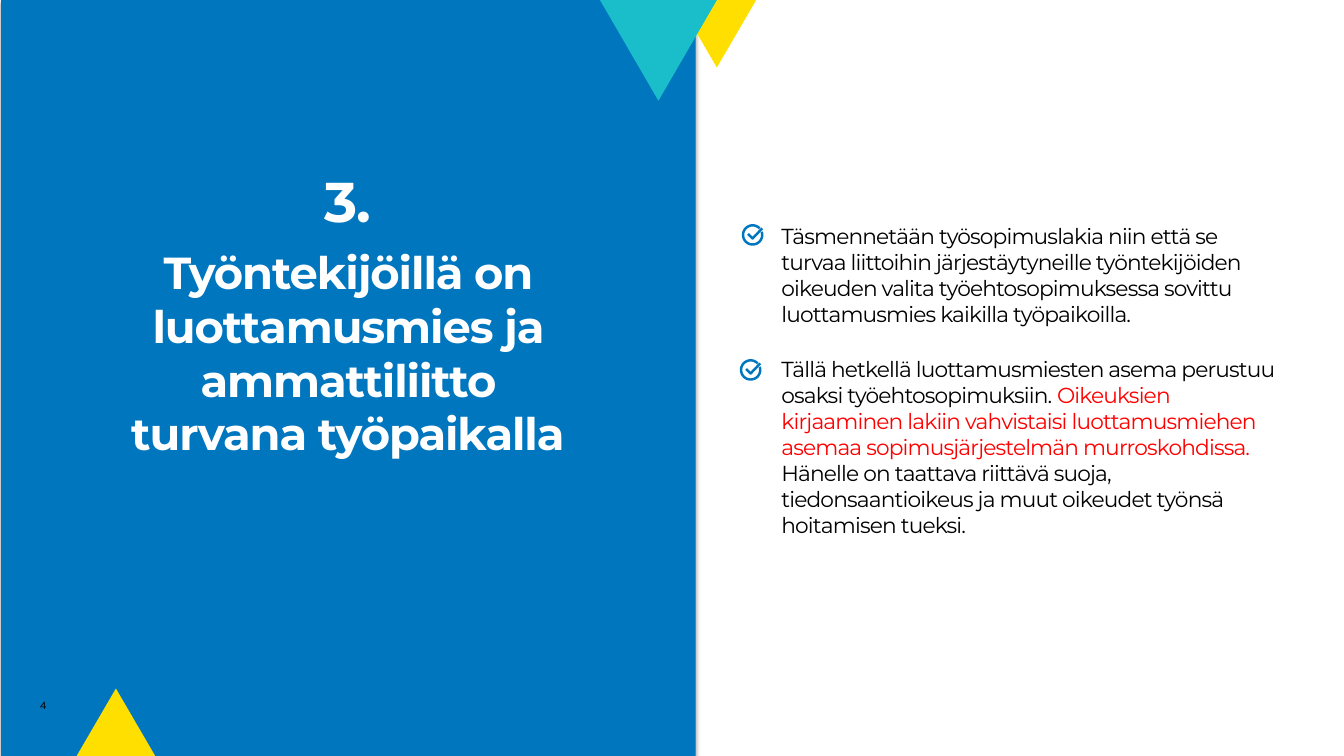
from math import cos, radians, sin

from lxml.etree import SubElement
from pptx import Presentation
from pptx.dml.color import RGBColor
from pptx.enum.shapes import MSO_SHAPE
from pptx.enum.text import MSO_ANCHOR, MSO_AUTO_SIZE, PP_ALIGN
from pptx.oxml.ns import qn
from pptx.util import Inches, Pt

WIDTH, HEIGHT = Inches(13.33), Inches(7.5)
BLUE = RGBColor(0x00, 0x76, 0xBE)
YELLOW = RGBColor(0xFF, 0xDF, 0x00)
TEAL = RGBColor(0x1A, 0xBE, 0xCA)
WHITE = RGBColor(0xFF, 0xFF, 0xFF)
BLACK = RGBColor(0x00, 0x00, 0x00)
RED = RGBColor(0xFF, 0x00, 0x00)


def across(percent):
    return round(WIDTH * percent / 100)


def down(percent):
    return round(HEIGHT * percent / 100)


def area(left, top, width, height):
    return across(left), down(top), across(width), down(height)


def add_block(page, kind, place, color, rotation=0):
    block = page.shapes.add_shape(kind, *area(*place))
    block.shadow.inherit = False
    block.fill.solid()
    block.fill.fore_color.rgb = color
    block.line.fill.background()
    block.rotation = rotation
    return block


def add_soft_shadow(block):
    effects = block._element.spPr.find(qn("a:effectLst"))
    shadow = SubElement(effects, qn("a:outerShdw"), blurRad=str(Pt(3.1)),
                        dist=str(Pt(1.8)), dir="5400000", rotWithShape="0")
    color = SubElement(shadow, qn("a:srgbClr"), val="000000")
    SubElement(color, qn("a:alpha"), val="35000")


def prepare_box(page, box, place, top_inset=0.05):
    page.shapes._spTree.append(box._element)
    box.left, box.top, box.width, box.height = area(*place)
    frame = box.text_frame
    frame.word_wrap = True
    frame.auto_size = MSO_AUTO_SIZE.NONE
    frame.vertical_anchor = MSO_ANCHOR.TOP
    frame.margin_left = frame.margin_right = Inches(0.1)
    frame.margin_top, frame.margin_bottom = Inches(top_inset), Inches(0.05)
    return frame


def format_paragraph(para, align=PP_ALIGN.LEFT, before=0):
    properties = para._p.get_or_add_pPr()
    properties.set("marL", "0")
    properties.set("indent", "0")
    SubElement(properties, qn("a:buNone"))
    para.alignment = align
    para.space_before = Pt(before)


def add_text(para, text, size=15.5, color=BLACK, font="Montserrat", bold=False, spacing=-0.6):
    span = para.add_run()
    span.text = text
    span.font.size = Pt(size)
    span.font.name = font
    span.font.bold = bold
    span.font.color.rgb = color
    span._r.get_or_add_rPr().set("spc", str(round(spacing * 100)))


def add_check_mark(page, column, row):
    center_x, center_y = across(column), down(row)
    radius = Inches(0.095)
    ring = [(round(center_x + radius * cos(radians(angle))),
             round(center_y + radius * sin(radians(angle))))
            for angle in range(-19, 318, 6)]
    tick = [(center_x + Inches(x), center_y + Inches(y))
            for x, y in ((-0.045, -0.01), (0, 0.035), (0.095, -0.065))]
    builder = page.shapes.build_freeform(*ring[0], scale=1.0)
    builder.add_line_segments(ring[1:], close=False)
    builder.move_to(*tick[0])
    builder.add_line_segments(tick[1:], close=False)
    mark = builder.convert_to_shape()
    mark.shadow.inherit = False
    mark.fill.background()
    mark.line.color.rgb = BLUE
    mark.line.width = Pt(1.75)


def add_background(page):
    panel = add_block(page, MSO_SHAPE.RECTANGLE, (0.08, 0, 51.69, 100), BLUE)
    add_soft_shadow(panel)
    triangle = MSO_SHAPE.ISOSCELES_TRIANGLE
    add_block(page, triangle, (5.7, 91.07, 5.85, 8.93), YELLOW)
    add_block(page, triangle, (50.41, 0, 5.85, 8.93), YELLOW, rotation=180)
    add_block(page, triangle, (44.64, 0, 8.7, 13.33), TEAL, rotation=180)


def add_heading(page):
    frame = prepare_box(page, page.shapes.title, (8.18, 21.07, 35.41, 23.6), top_inset=0.07)
    lines = (("3.", 40, 0),
             ("Työntekijöillä on luottamusmies ja ammattiliitto turvana työpaikalla", 32, 8))
    for index, (text, size, before) in enumerate(lines):
        para = frame.add_paragraph() if index else frame.paragraphs[0]
        format_paragraph(para, align=PP_ALIGN.CENTER, before=before)
        add_text(para, text, size=size, color=WHITE, bold=True, spacing=-0.8)


def add_point(page, box, top, height, mark, spans):
    para = prepare_box(page, box, (57.39, top, 38.26, height)).paragraphs[0]
    format_paragraph(para)
    for text, color in spans:
        add_text(para, text, color=color)
    add_check_mark(page, *mark)


def add_page_number(page):
    place = (2.25, 91.73, 3.3, 4.93)
    box = page.shapes.add_textbox(*area(*place))
    para = prepare_box(page, box, place).paragraphs[0]
    add_text(para, "4", size=8, font="Karla", spacing=0)


def main():
    deck = Presentation()
    deck.slide_width, deck.slide_height = WIDTH, HEIGHT
    page = deck.slides.add_slide(deck.slide_layouts.get_by_name("Two Content"))
    add_background(page)
    add_heading(page)
    add_page_number(page)
    first, second = page.placeholders[1], page.placeholders[2]
    add_point(page, first, 28.8, 14.27, (56, 31.07), [
        ("Täsmennetään työsopimuslakia niin että se turvaa liittoihin järjestäytyneille "
         "työntekijöiden oikeuden valita työehtosopimuksessa sovittu luottamusmies "
         "kaikilla työpaikoilla.", BLACK),
    ])
    add_point(page, second, 46.4, 32.13, (55.85, 48.93), [
        ("Tällä hetkellä luottamusmiesten asema perustuu osaksi työehtosopimuksiin. ", BLACK),
        ("Oikeuksien kirjaaminen lakiin vahvistaisi luottamusmiehen asemaa "
         "sopimusjärjestelmän murroskohdissa. ", RED),
        ("Hänelle on taattava riittävä suoja, tiedonsaantioikeus ja muut oikeudet "
         "työnsä hoitamisen tueksi.", BLACK),
    ])
    deck.save("out.pptx")


if __name__ == "__main__":
    main()
